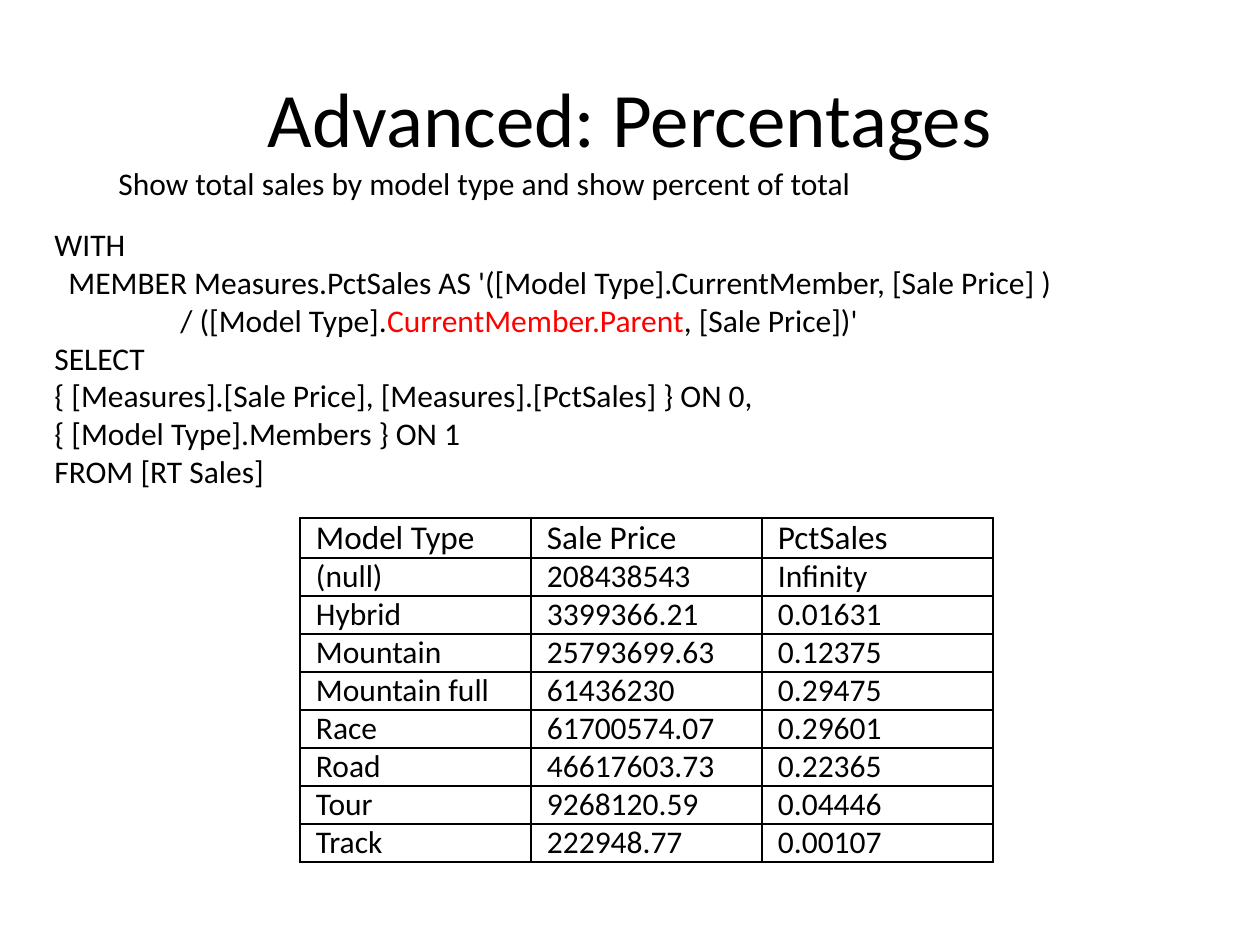
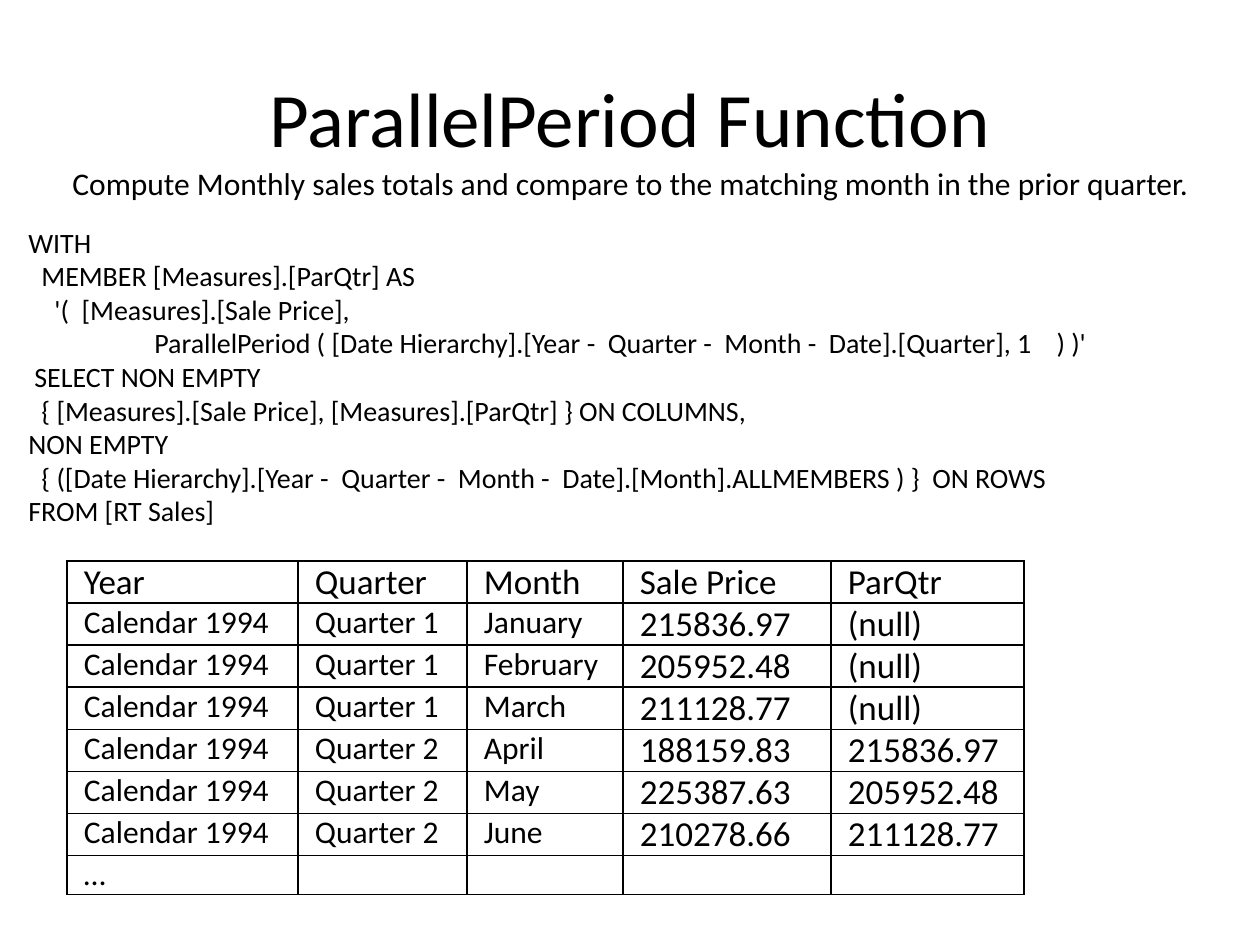
"""Build two slides on MDX queries, each with its code and result table."""
from lxml.etree import SubElement
from pptx import Presentation
from pptx.dml.color import RGBColor
from pptx.enum.text import PP_ALIGN, MSO_ANCHOR
from pptx.oxml.ns import qn
from pptx.util import Emu, Pt

PX = 914400 / 126
FONT = "Calibri"
COLORS = {"text": "000000", "accent": "FF0000", "border": "000000", "cell": "FFFFFF"}
TAB = 126

PERCENT_CODE = [
    (0, "WITH"),
    (14, "MEMBER Measures.PctSales AS '([Model Type].CurrentMember, [Sale Price] )"),
    (TAB, "/ ([Model Type].CurrentMember.Parent, [Sale Price])'"),
    (0, "SELECT"),
    (0, "{ [Measures].[Sale Price], [Measures].[PctSales] } ON 0,"),
    (0, "{ [Model Type].Members } ON 1"),
    (0, "FROM [RT Sales]"),
]
PERCENT_ROWS = [
    ("Model Type", "Sale Price", "PctSales"),
    ("(null)", "208438543", "Infinity"),
    ("Hybrid", "3399366.21", "0.01631"),
    ("Mountain", "25793699.63", "0.12375"),
    ("Mountain full", "61436230", "0.29475"),
    ("Race", "61700574.07", "0.29601"),
    ("Road", "46617603.73", "0.22365"),
    ("Tour", "9268120.59", "0.04446"),
    ("Track", "222948.77", "0.00107"),
]
PERIOD_CODE = [
    (0, "WITH"),
    (13, "MEMBER [Measures].[ParQtr] AS"),
    (26, "'(  [Measures].[Sale Price],"),
    (TAB, "ParallelPeriod ( [Date Hierarchy].[Year -  Quarter -  Month -  Date].[Quarter], 1    ) )'"),
    (6, "SELECT NON EMPTY"),
    (13, "{ [Measures].[Sale Price], [Measures].[ParQtr] } ON COLUMNS,"),
    (0, "NON EMPTY"),
    (13, "{ ([Date Hierarchy].[Year -  Quarter -  Month -  Date].[Month].ALLMEMBERS ) }  ON ROWS"),
    (0, "FROM [RT Sales]"),
]
PERIOD_ROWS = [
    ("Year", "Quarter", "Month", "Sale Price", "ParQtr"),
    ("Calendar 1994", "Quarter 1", "January", "215836.97", "(null)"),
    ("Calendar 1994", "Quarter 1", "February", "205952.48", "(null)"),
    ("Calendar 1994", "Quarter 1", "March", "211128.77", "(null)"),
    ("Calendar 1994", "Quarter 2", "April", "188159.83", "215836.97"),
    ("Calendar 1994", "Quarter 2", "May", "225387.63", "205952.48"),
    ("Calendar 1994", "Quarter 2", "June", "210278.66", "211128.77"),
    ("…", "", "", "", ""),
]


def px(n):
    """Turn pixels into EMU."""
    return Emu(round(n * PX))


def rgb(name):
    """Look up a palette colour."""
    return RGBColor.from_string(COLORS[name])


def style(p, size):
    """Give a paragraph the shared font."""
    p.font.name, p.font.size = FONT, Pt(size)
    p.font.color.rgb = rgb("text")


def add_titled_slide(prs, title):
    """Add a slide with its title placeholder set."""
    s = prs.slides.add_slide(prs.slide_layouts[5])
    sp = s.shapes.title
    sp.left, sp.top, sp.width, sp.height = map(px, (63, 38, 1134, 157))
    tf = sp.text_frame
    tf.text = title
    tf.vertical_anchor = MSO_ANCHOR.MIDDLE
    p = tf.paragraphs[0]
    p.alignment = PP_ALIGN.CENTER
    style(p, 44)
    return s


def add_text(s, box, lines, size, wrap=True, highlight=None):
    """Add a text box of (indent, text) lines, with one phrase in the accent colour."""
    tf = s.shapes.add_textbox(*map(px, box)).text_frame
    tf.word_wrap = wrap
    for i, (indent, text) in enumerate(lines):
        p = tf.add_paragraph() if i else tf.paragraphs[0]
        style(p, size)
        if indent:
            pPr = p._p.get_or_add_pPr()
            pPr.set("marL", str(px(indent)))
            pPr.set("indent", "0")
        parts = text.partition(highlight) if highlight else (text,)
        for part in filter(None, parts):
            r = p.add_run()
            r.text = part
            if part == highlight:
                r.font.color.rgb = rgb("accent")


def add_borders(cell):
    """Draw a one-point line on each side of a cell."""
    tcPr = cell._tc.get_or_add_tcPr()
    for side in ("lnL", "lnR", "lnT", "lnB"):
        ln = SubElement(tcPr, qn(f"a:{side}"), w=str(Pt(1)))
        fill = SubElement(ln, qn("a:solidFill"))
        SubElement(fill, qn("a:srgbClr"), val=COLORS["border"])


def add_grid(s, left, top, widths, heights, rows, inset, size_at):
    """Add a bordered table whose text size follows size_at(row, column)."""
    box = map(px, (left, top, sum(widths), sum(heights)))
    table = s.shapes.add_table(len(rows), len(widths), *box).table
    table.first_row = table.horz_banding = False
    for col, width in zip(table.columns, widths):
        col.width = px(width)
    for i, (row, height) in enumerate(zip(rows, heights)):
        table.rows[i].height = px(height)
        for j, text in enumerate(row):
            cell = table.cell(i, j)
            cell.margin_left = cell.margin_right = px(inset)
            cell.margin_top = cell.margin_bottom = 0
            add_borders(cell)
            cell.fill.solid()
            cell.fill.fore_color.rgb = rgb("cell")
            cell.text = text
            style(cell.text_frame.paragraphs[0], size_at(i, j))


def add_percentages(prs):
    """Build the slide on percent of total."""
    s = add_titled_slide(prs, "Advanced: Percentages")
    add_text(s, (42, 219, 1166, 280), PERCENT_CODE, 18, highlight="CurrentMember.Parent")
    add_text(s, (106, 158, 759, 50),
             [(0, "Show total sales by model type and show percent of total")], 18, wrap=False)
    add_grid(s, 300, 518, [231] * 3, [40] + [38] * 8, PERCENT_ROWS, 16,
             lambda i, j: 18 if i else 19)


def add_parallel_period(prs):
    """Build the slide on comparing with the prior quarter."""
    s = add_titled_slide(prs, "ParallelPeriod Function")
    add_text(s, (16, 219, 1244, 323), PERIOD_CODE, 16)
    add_text(s, (60, 158, 1155, 50),
             [(0, "Compute Monthly sales totals and compare to the matching month in the prior quarter.")],
             18, wrap=False)
    last = len(PERIOD_ROWS) - 1
    add_grid(s, 67, 561, [231, 169, 156, 208, 193], [42] * last + [39], PERIOD_ROWS, 17,
             lambda i, j: 20 if i == 0 or (j > 2 and i < last) else 18)


def main():
    """Build and save the presentation."""
    prs = Presentation()
    prs.slide_width, prs.slide_height = px(1260), px(945)
    add_percentages(prs)
    add_parallel_period(prs)
    prs.save("out.pptx")


if __name__ == "__main__":
    main()
